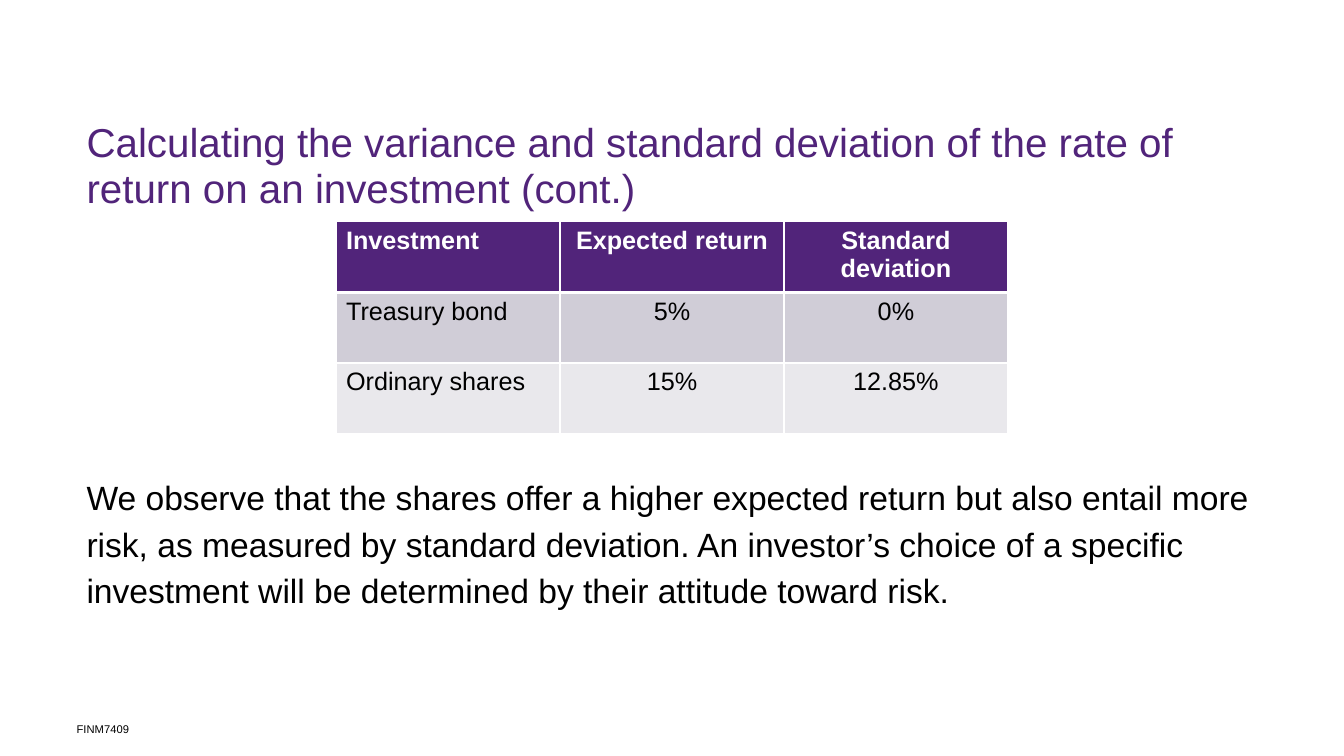
from pptx import Presentation
from pptx.util import Pt
from pptx.dml.color import RGBColor as Rgb
from pptx.enum.text import PP_ALIGN as Align, MSO_ANCHOR as Anchor
from lxml.etree import SubElement as Sub
from pptx.oxml.ns import qn

# Content
COLORS = {"purple": "51247A", "black": "000000", "white": "FFFFFF",
          "band": "D0CDD7", "pale": "E9E8EC"}
TITLE = ("Calculating the variance and standard deviation of the rate of "
         "return on an investment (cont.)")
BODY = ("We observe that the shares offer a higher expected return but also "
        "entail more risk, as measured by standard deviation. An investor’s "
        "choice of a specific investment will be determined by their "
        "attitude toward risk.")
FOOTER = "FINM7409"
ROWS = [("Investment", "Expected return", "Standard deviation"),
        ("Treasury bond", "5%", "0%"),
        ("Ordinary shares", "15%", "12.85%")]
FILLS = ["purple", "band", "pale"]

# Layout in points
LEFT, WIDE = 54.7, 850.3
COL, ROW = 160, 50.4
GRID_X, GRID_Y = 240, 158.4


def style(para, size, color, bold=False):
    font = para.font
    font.name, font.size, font.bold = "Arial", Pt(size), bold
    font.color.rgb = Rgb.from_string(COLORS[color])


def add_text(slide, text, top, width, height, size, color, space=1.0,
             inset=(7.2, 3.6), anchor=Anchor.TOP):
    box = slide.shapes.add_textbox(Pt(LEFT), Pt(top), Pt(width), Pt(height))
    frame = box.text_frame
    frame.word_wrap = True
    frame.vertical_anchor = anchor
    frame.margin_left = frame.margin_right = Pt(inset[0])
    frame.margin_top = frame.margin_bottom = Pt(inset[1])
    para = frame.paragraphs[0]
    para.text = text
    para.line_spacing = space
    style(para, size, color)


def add_edges(cell, head):
    props = cell._tc.get_or_add_tcPr()
    for n, side in enumerate(("lnL", "lnR", "lnT", "lnB")):
        width = 3 if head and side == "lnB" else 1
        line = Sub(props, qn("a:" + side), w=str(Pt(width)))
        fill = Sub(line, qn("a:solidFill"))
        Sub(fill, qn("a:srgbClr"), val=COLORS["white"])
        props.remove(line)
        props.insert(n, line)


def add_grid(slide):
    count = len(ROWS[0])
    grid = slide.shapes.add_table(len(ROWS), count, Pt(GRID_X), Pt(GRID_Y),
                                  Pt(COL * count), Pt(ROW * len(ROWS))).table
    for col in grid.columns:
        col.width = Pt(COL)
    for r, row in enumerate(ROWS):
        grid.rows[r].height = Pt(ROW)
        for c, text in enumerate(row):
            cell = grid.cell(r, c)
            cell.text = text
            cell.fill.solid()
            cell.fill.fore_color.rgb = Rgb.from_string(COLORS[FILLS[r]])
            add_edges(cell, r == 0)
            para = cell.text_frame.paragraphs[0]
            para.alignment = Align.CENTER if c else Align.LEFT
            style(para, 18, "black" if r else "white", r == 0)


def main():
    deck = Presentation()
    deck.slide_width, deck.slide_height = Pt(960), Pt(540)
    slide = deck.slides.add_slide(deck.slide_layouts[6])
    # Title, table, conclusion, footer
    add_text(slide, TITLE, 82.8, WIDE, 68, 28.8, "purple", 0.95)
    add_grid(slide)
    add_text(slide, BODY, 333, WIDE, 104, 24, "black", 1.15)
    add_text(slide, FOOTER, 511.2, 142, 18.7, 8, "black",
             inset=(0, 0), anchor=Anchor.MIDDLE)
    deck.save("out.pptx")


if __name__ == "__main__":
    main()
